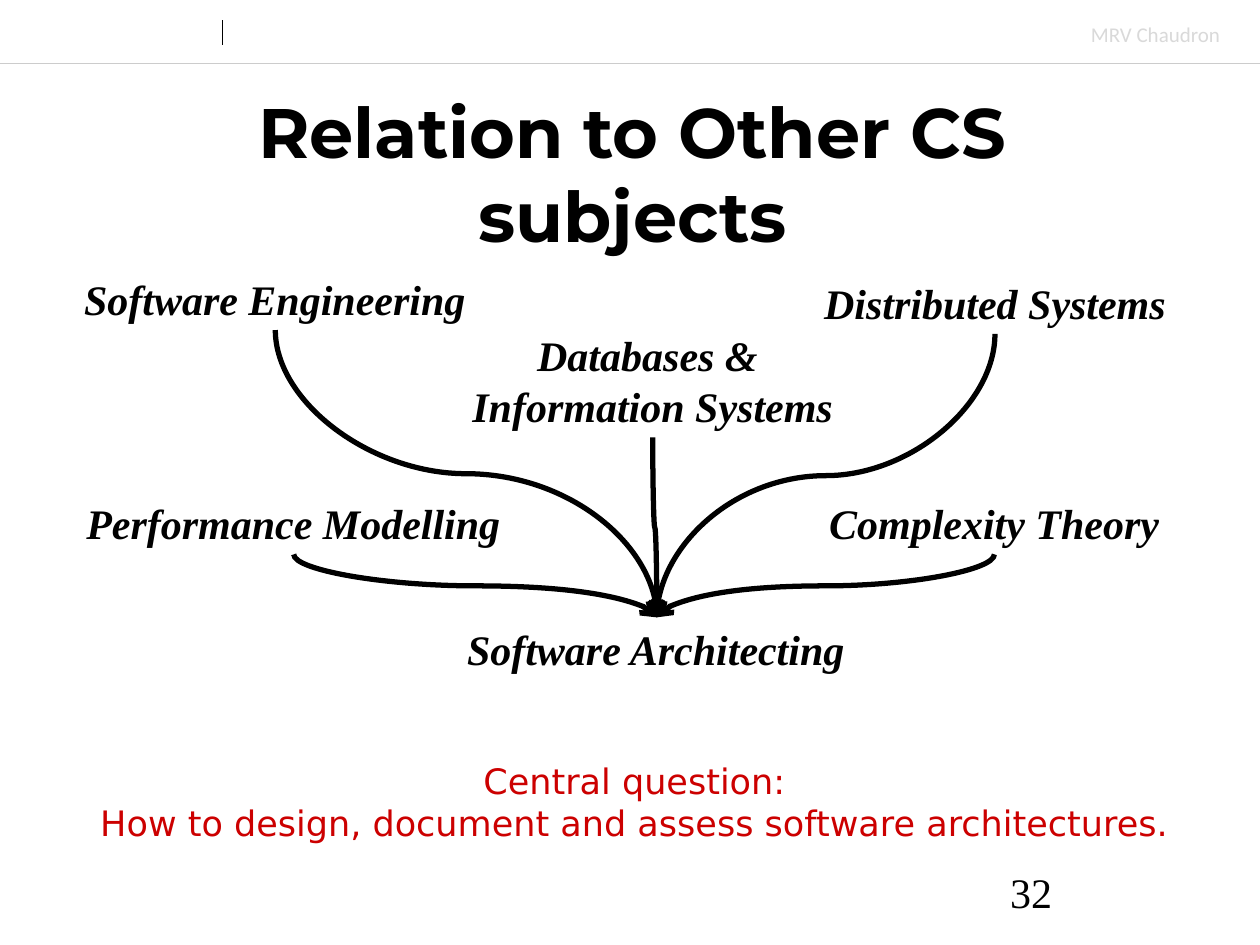
from pptx import Presentation
from pptx.util import Pt
from pptx.dml.color import RGBColor
from pptx.enum.shapes import MSO_CONNECTOR
from pptx.enum.text import MSO_ANCHOR, MSO_AUTO_SIZE, PP_ALIGN
from pptx.oxml.ns import qn
from lxml.etree import SubElement

BLACK = RGBColor(0, 0, 0)
RED = RGBColor(0xCC, 0, 0)
PALE = RGBColor(0xD9, 0xD9, 0xD9)
RULE = RGBColor(0xCC, 0xCC, 0xCC)
SERIF = "Times New Roman"
BOTTOM, TOP = 2, 0

# Content: text, then left, top, width, height in points
TITLE = "Relation to Other CS subjects"
AUTHOR = "MRV Chaudron"
PAGE = "32"
QUESTION = ("Central question:\n"
            "How to design, document and assess software architectures.")
GOAL = ("Software Architecting", (259.8, 352.8, 231, 36))
TOPICS = [
    ("Performance Modelling", (42.2, 280.8, 251.3, 36)),
    ("Complexity Theory", (466.7, 280.8, 203, 36)),
    ("Databases & \nInformation Systems", (262.8, 185, 220.3, 65)),
    ("Distributed Systems", (463.8, 154.8, 209.5, 36)),
    ("Software Engineering", (41, 152.6, 232.6, 36)),
]
RULES = [((0, 36), (720, 36), RULE, 0.25),
         ((127.4, 11.5), (127.4, 25.9), BLACK, 0.5)]


def add_text(text, spot, size, face=SERIF, color=BLACK, bold=False,
             slant=False, center=False, wrap=False):
    box = slide.shapes.add_textbox(*map(Pt, spot))
    frame = box.text_frame
    frame.word_wrap = wrap
    frame.auto_size = MSO_AUTO_SIZE.NONE if wrap else MSO_AUTO_SIZE.SHAPE_TO_FIT_TEXT
    frame.text = text
    for para in frame.paragraphs:
        para.alignment = PP_ALIGN.CENTER if center else PP_ALIGN.LEFT
        for run in para.runs:
            font = run.font
            font.name, font.size = face, Pt(size)
            font.bold, font.italic = bold, slant
            font.color.rgb = color
    return box


def add_line(kind, start, end, color, width):
    line = slide.shapes.add_connector(kind, *map(Pt, start + end))
    line.line.color.rgb = color
    line.line.width = Pt(width)
    SubElement(line.element.spPr, qn("a:effectLst"))
    return line


def add_curve(source, goal):
    """Draw an arrow that leaves downward and arrives downward."""
    line = add_line(MSO_CONNECTOR.CURVE, (0, 0), (0, 0), BLACK, 3)
    line.begin_connect(source, BOTTOM)
    line.end_connect(goal, TOP)
    x1, y1 = source.left + source.width // 2, source.top + source.height
    x2, y2 = goal.left + goal.width // 2, goal.top
    # The frame is turned a quarter, so its width is the drop
    drop, span = y2 - y1, abs(x2 - x1)
    line.left, line.top = (x1 + x2 - drop) // 2, (y1 + y2 - span) // 2
    line.width, line.height = drop, span
    right = x2 > x1
    frame = line.element.spPr.find(qn("a:xfrm"))
    frame.set("rot", str((270 if right else 90) * 60000))
    frame.set("flipH", "1" if right else "0")
    frame.set("flipV", "0")
    stroke = line.element.spPr.find(qn("a:ln"))
    SubElement(stroke, qn("a:tailEnd"), type="arrow")


deck = Presentation()
deck.slide_width, deck.slide_height = Pt(720), Pt(540)
slide = deck.slides.add_slide(deck.slide_layouts[6])

# Header
for start, end, color, width in RULES:
    add_line(MSO_CONNECTOR.STRAIGHT, start, end, color, width)
add_text(AUTHOR, (616.3, 8.6, 88.6, 21.6), 12, "Calibri", PALE)

# Title and page number
title = add_text(TITLE, (55.4, 53.3, 612, 90), 40, "Montserrat", bold=True,
                 center=True, wrap=True)
title.text_frame.vertical_anchor = MSO_ANCHOR.MIDDLE
add_text(PAGE, (570.2, 491.8, 149.8, 36), 24, wrap=True)

# Topics leading to the goal
style = dict(size=24, bold=True, slant=True)
boxes = [add_text(text, spot, center="\n" in text, **style)
         for text, spot in TOPICS]
goal = add_text(*GOAL, **style)
for box in boxes:
    add_curve(box, goal)

# Central question
add_text(QUESTION, (49.7, 430.6, 625.7, 55.4), 20, "DejaVu Sans", RED,
         center=True)

deck.save("out.pptx")
